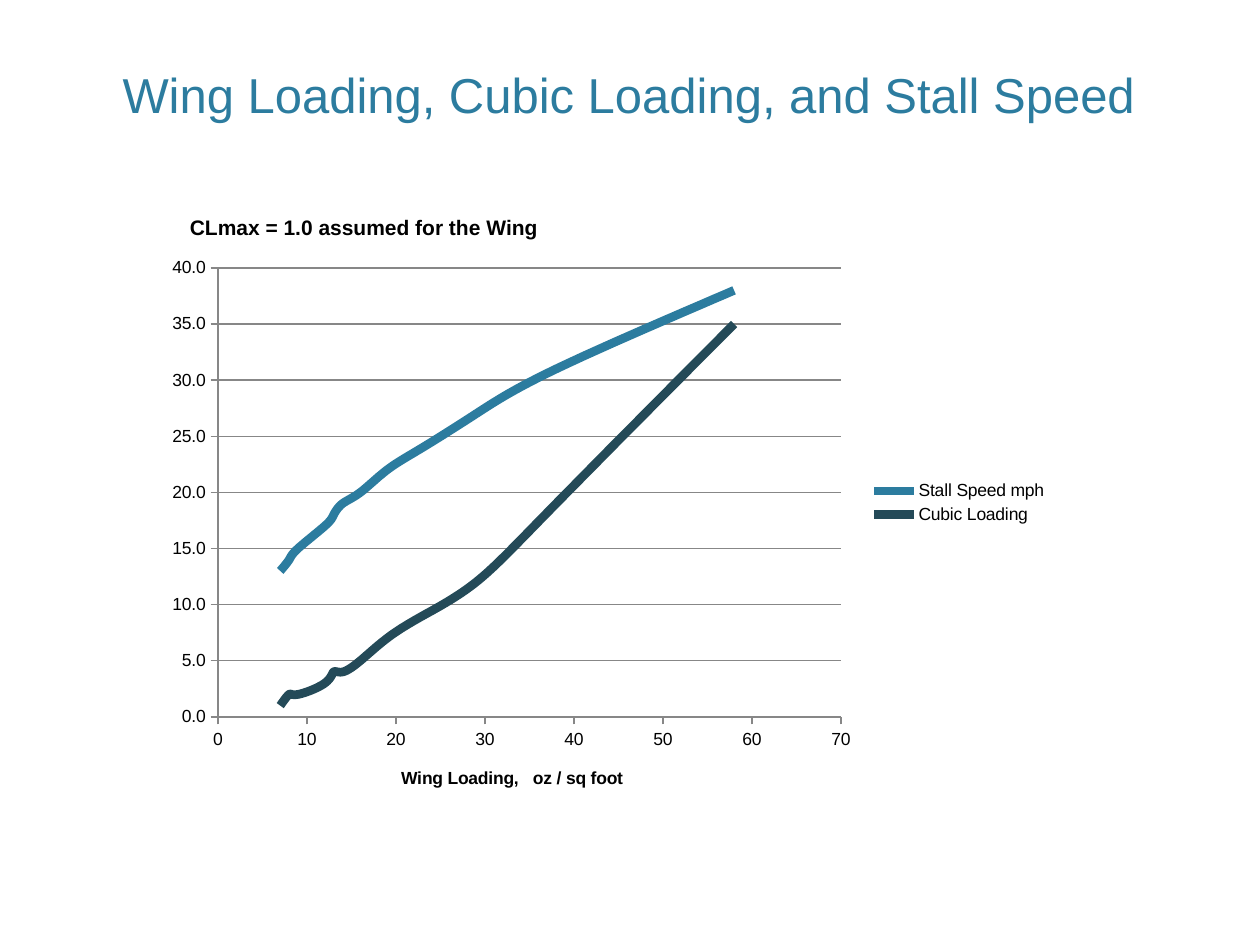
from lxml.etree import SubElement
from pptx import Presentation
from pptx.chart.data import XyChartData
from pptx.dml.color import RGBColor
from pptx.enum.chart import XL_CHART_TYPE, XL_LEGEND_POSITION, XL_TICK_MARK
from pptx.enum.text import MSO_ANCHOR, PP_ALIGN
from pptx.oxml.ns import qn
from pptx.util import Pt

TITLE = "Wing Loading, Cubic Loading, and Stall Speed"
CHART_TITLE = "CLmax = 1.0 assumed for the Wing"
X_TITLE = "Wing Loading,   oz / sq foot"
WING_LOADING = [7, 8, 9, 12, 13, 14, 16, 19, 23, 29, 38, 58]
SERIES = [
    ("Stall Speed mph", "2C7C9F", [13, 14, 15, 17, 18, 19, 20, 22, 24, 27, 31, 38]),
    ("Cubic Loading", "244A58", [1, 2, 2, 3, 4, 4, 5, 7, 9, 12, 19, 35]),
]
TITLE_BOX = (74, 37, 1109, 93)
CHART_BOX = (155, 192, 906, 622)
PLOT_BOX = (218, 268, 623, 449)
CHART_TITLE_AT = (186, 211)
X_TITLE_AT = (398, 763)
LEGEND_BOX = (867, 477, 184, 52)
FONT = "Arial"
GREY = "878787"
PX = 914400 / 126


def px(n):
    return round(n * PX)


def rgb(value):
    return RGBColor.from_string(value)


def style(font, size, color="000000", bold=False):
    font.name, font.size, font.bold = FONT, Pt(size), bold
    font.color.rgb = rgb(color)


def place(element, index, box, inner=False):
    for old in element.findall(qn("c:layout")):
        element.remove(old)
    layout = SubElement(element, qn("c:layout"))
    element.insert(index, layout)
    manual = SubElement(layout, qn("c:manualLayout"))
    left, top, width, height = CHART_BOX
    values = [(box[0] - left) / width, (box[1] - top) / height]
    if len(box) == 4:
        values += [box[2] / width, box[3] / height]
    settings = [("layoutTarget", "inner")] if inner else []
    settings += [("xMode", "edge"), ("yMode", "edge")]
    settings += [(k, f"{v:.4f}") for k, v in zip("xywh", values)]
    for tag, val in settings:
        SubElement(manual, qn(f"c:{tag}")).set("val", val)


def add_title(owner, text, size, at):
    tf = owner.text_frame
    tf.text = text
    style(tf.paragraphs[0].runs[0].font, size, bold=True)
    place(owner._element, 1, at)


def style_line(line, color, width):
    line.color.rgb = rgb(color)
    line.width = Pt(width)


def style_axis(axis, top, step, number_format):
    axis.minimum_scale, axis.maximum_scale, axis.major_unit = 0, top, step
    axis.major_tick_mark = XL_TICK_MARK.OUTSIDE
    axis.minor_tick_mark = XL_TICK_MARK.NONE
    axis.tick_labels.number_format = number_format
    axis.tick_labels.number_format_is_linked = False
    style(axis.tick_labels.font, 10)
    style_line(axis.format.line, GREY, 0.75)


prs = Presentation()
prs.slide_width, prs.slide_height = px(1260), px(945)
s = prs.slides.add_slide(prs.slide_layouts[5])

title = s.shapes.title
title.left, title.top, title.width, title.height = map(px, TITLE_BOX)
tf = title.text_frame
tf.text = TITLE
tf.vertical_anchor = MSO_ANCHOR.BOTTOM
p = tf.paragraphs[0]
p.alignment = PP_ALIGN.CENTER
style(p.runs[0].font, 28, "2C7C9F")

data = XyChartData()
for name, _, values in SERIES:
    series = data.add_series(name)
    for x, y in zip(WING_LOADING, values):
        series.add_data_point(x, y)
chart = s.shapes.add_chart(XL_CHART_TYPE.XY_SCATTER_SMOOTH_NO_MARKERS,
                           *map(px, CHART_BOX), data).chart
style(chart.font, 10)
plot = chart.plots[0]
plot.vary_by_categories = False
for series, (_, color, _) in zip(plot.series, SERIES):
    series._element.find(qn("c:smooth")).set("val", "1")
    style_line(series.format.line, color, 5)

style_axis(chart.category_axis, 70, 10, "0")
style_axis(chart.value_axis, 40, 5, "0.0")
chart.category_axis.has_major_gridlines = False
chart.value_axis.has_major_gridlines = True
style_line(chart.value_axis.major_gridlines.format.line, GREY, 0.75)

chart.has_title = True
add_title(chart.chart_title, CHART_TITLE, 12, CHART_TITLE_AT)
add_title(chart.category_axis.axis_title, X_TITLE, 10, X_TITLE_AT)
chart.category_axis.axis_title._element.get_or_add_tx_rich()
chart.has_legend = True
chart.legend.position = XL_LEGEND_POSITION.RIGHT
chart.legend.include_in_layout = False
style(chart.legend.font, 10)
place(chart.legend._element, 1, LEGEND_BOX)
place(chart._chartSpace.chart.plotArea, 0, PLOT_BOX, inner=True)

prs.save("out.pptx")
